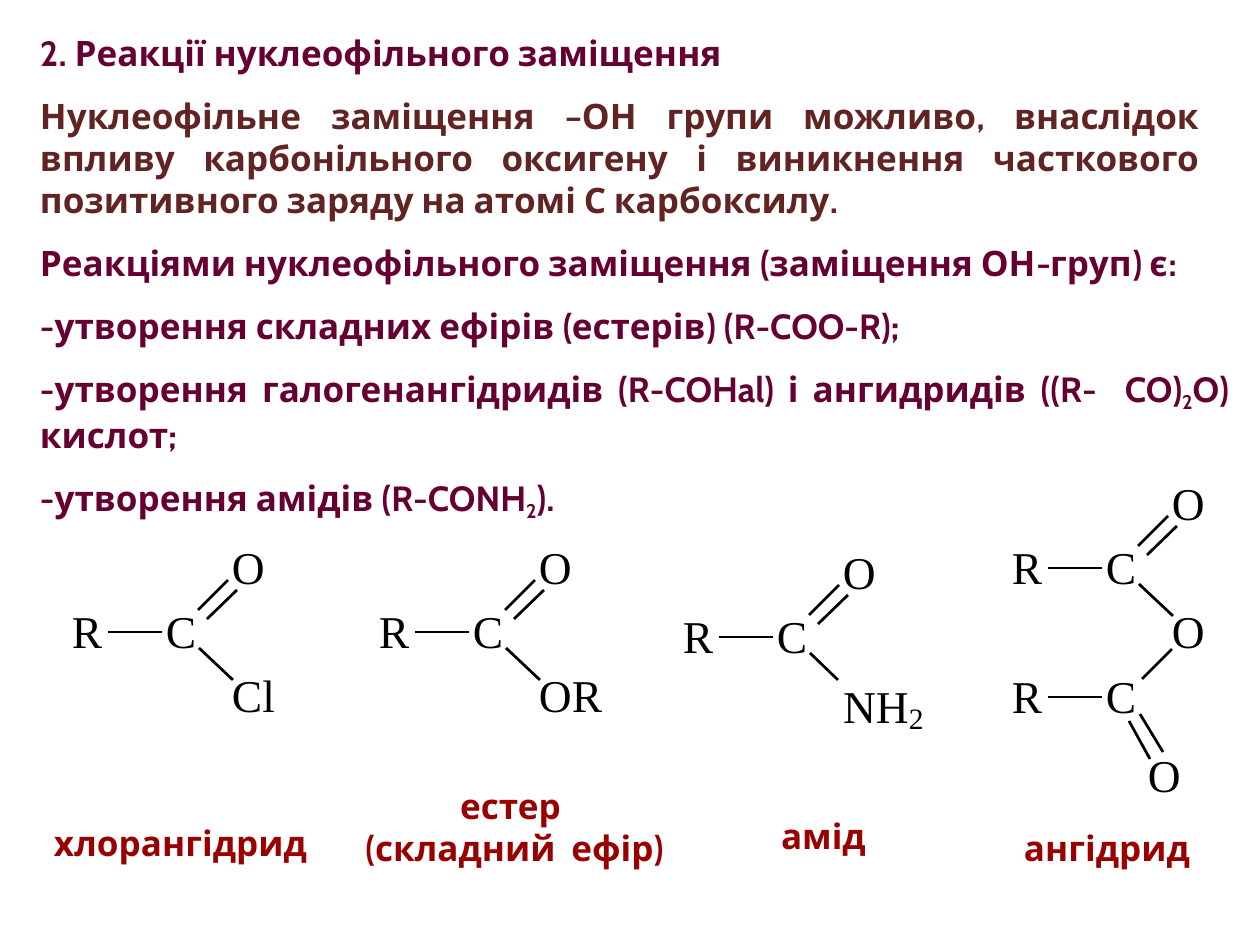
from dataclasses import dataclass

from lxml import etree
from pptx import Presentation
from pptx.dml.color import RGBColor
from pptx.enum.shapes import MSO_CONNECTOR
from pptx.enum.text import MSO_AUTO_SIZE, PP_ALIGN
from pptx.oxml.ns import qn
from pptx.util import Emu, Pt

JUSTIFY, CENTER, LEFT = PP_ALIGN.JUSTIFY, PP_ALIGN.CENTER, PP_ALIGN.LEFT
STRAIGHT = MSO_CONNECTOR.STRAIGHT
GROW = MSO_AUTO_SIZE.SHAPE_TO_FIT_TEXT


@dataclass(frozen=True)
class TextStyle:
    font: str
    size: float
    color: str
    bold: bool = False
    baseline: int = 0  # percent of the type size


@dataclass(frozen=True)
class Theme:
    heading: TextStyle = TextStyle("Cabin", 20, "660033", True)
    heading_sub: TextStyle = TextStyle("Cabin", 19.5, "660033", True, -21)
    brown: TextStyle = TextStyle("Cabin", 20, "622422", True)
    label: TextStyle = TextStyle("Cabin", 20, "990000", True)
    atom: TextStyle = TextStyle("Times New Roman", 26, "000000")
    atom_sub: TextStyle = TextStyle("Times New Roman", 29.2, "000000", False, -13)
    bond_color: str = "000000"
    bond_width: float = 1.56


@dataclass(frozen=True)
class Para:
    runs: list  # (text, TextStyle) pairs
    before: float = 1
    indent: int = 1
    right: int = 0
    align: int = LEFT


def px(n):
    return Emu(round(n * 914400 / 126))


class Sheet:
    def __init__(self, s, theme):
        self.s = s
        self.theme = theme

    def text(self, x, y, w, h, paras, top=1):
        tf = self.s.shapes.add_textbox(px(x), px(y), px(w), px(h)).text_frame
        tf.word_wrap = True
        tf.auto_size = GROW
        tf.margin_left = tf.margin_right = tf.margin_bottom = 0
        tf.margin_top = px(top)
        for i, para in enumerate(paras):
            self.paragraph(tf.add_paragraph() if i else tf.paragraphs[0], para)

    def paragraph(self, p, para):
        p.alignment = para.align
        p.space_before = Pt(para.before)
        pPr = p._p.get_or_add_pPr()
        pPr.set("marL", str(px(para.indent)))
        pPr.set("marR", str(px(para.right)))
        pPr.set("indent", "0")
        for text, style in para.runs:
            r = p.add_run()
            r.text = text
            r.font.name = style.font
            r.font.size = Pt(style.size)
            r.font.bold = style.bold
            r.font.color.rgb = RGBColor.from_string(style.color)
            if style.baseline:
                r._r.get_or_add_rPr().set("baseline", str(style.baseline * 1000))

    def label(self, x, y, w, text):
        self.text(x, y, w, 45, [Para([(text, self.theme.label)])])

    def atom(self, x, y, symbol, sub="", w=38):
        runs = [(symbol, self.theme.atom)]
        if sub:
            runs.append((sub, self.theme.atom_sub))
        self.text(x, y, w, 58, [Para(runs)], top=2)

    def bond(self, x1, y1, x2, y2):
        c = self.s.shapes.add_connector(STRAIGHT, px(x1), px(y1), px(x2), px(y2))
        c.line.color.rgb = RGBColor.from_string(self.theme.bond_color)
        c.line.width = Pt(self.theme.bond_width)
        etree.SubElement(c._element.spPr, qn("a:effectLst"))

    def chain(self, x, y):
        """R-C, with x, y the corner of the R box."""
        self.atom(x, y, "R")
        self.atom(x + 94, y, "C")
        self.bond(x + 37, y + 31, x + 91, y + 31)

    def acyl(self, x, y, ligand, sub="", ligand_w=38, bond_end=(162, 79)):
        """R-C(=O)-ligand, with x, y the corner of the R box."""
        self.chain(x, y)
        self.atom(x + 160, y - 64, "O")
        self.atom(x + 160, y + 64, ligand, sub, ligand_w)
        for x1, y1, x2, y2 in ((136, 18, 166, -11), (127, 9, 157, -21),
                               (128, 47, *bond_end)):
            self.bond(x + x1, y + y1, x + x2, y + y2)


def main():
    prs = Presentation()
    prs.slide_width, prs.slide_height = px(1260), px(945)
    t = Theme()
    sheet = Sheet(prs.slides.add_slide(prs.slide_layouts[6]), t)

    # Heading, explanation and list of reactions
    body = [
        (12.5, 39, [("2. Реакції нуклеофільного заміщення", t.heading)]),
        (11.5, 39, [("Нуклеофільне заміщення –ОН групи можливо, внаслідок впливу "
                     "карбонільного оксигену і виникнення часткового позитивного "
                     "заряду на атомі С карбоксилу.", t.brown)]),
        (12, 9, [("Реакціями нуклеофільного заміщення (заміщення ОН-груп) є:",
                  t.heading)]),
        (12, 9, [("-утворення складних ефірів (естерів) (R-COO-R);", t.heading)]),
        (12, 9, [("-утворення галогенангідридів (R-COHal) і ангидридів ((R-  CO)",
                  t.heading), ("2", t.heading_sub), ("O) кислот;", t.heading)]),
        (12, 9, [("-утворення амідів (R-CONH", t.heading), ("2", t.heading_sub),
                 (").", t.heading)]),
    ]
    sheet.text(21, 11, 1217, 507,
               [Para(runs, before, 19, right, JUSTIFY)
                for before, right, runs in body], top=21)

    # Structural formulas
    sheet.acyl(71, 601, "Cl", ligand_w=60)
    sheet.acyl(378, 601, "OR", ligand_w=75)
    sheet.acyl(682, 606, "NH", "2", 97, (156, 74))
    sheet.acyl(1011, 537, "O")

    # Lower half of the anhydride
    sheet.chain(1011, 666)
    sheet.atom(1147, 745, "O")
    for ends in ((1172, 649, 1142, 679), (1129, 721, 1150, 759),
                 (1140, 714, 1163, 752)):
        sheet.bond(*ends)

    # Compound names
    sheet.label(53, 820, 261, "хлорангідрид")
    sheet.text(357, 784, 314, 87,
               [Para([(line, t.label)], 0, align=CENTER)
                for line in ("естер ", "(складний  ефір)")])
    sheet.label(780, 813, 95, "амід")
    sheet.label(1023, 825, 180, "ангідрид")

    prs.save("out.pptx")


if __name__ == "__main__":
    main()
